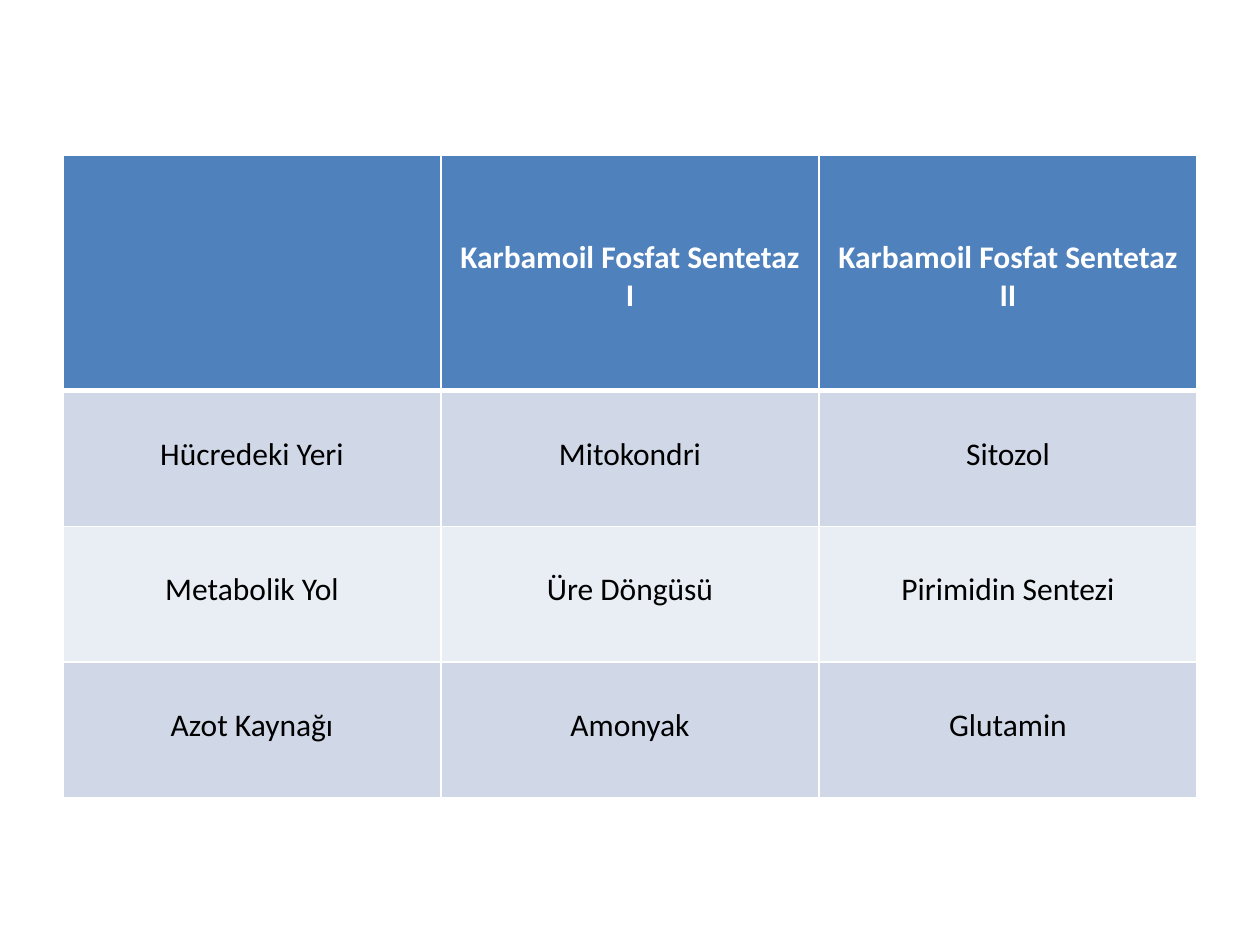
from lxml import etree
from pptx import Presentation
from pptx.dml.color import RGBColor
from pptx.enum.text import MSO_ANCHOR, PP_ALIGN
from pptx.oxml.ns import qn
from pptx.util import Cm, Pt

TOP, CENTER = MSO_ANCHOR.TOP, PP_ALIGN.CENTER

# Content
ROWS = [
    ("", "Karbamoil Fosfat Sentetaz I", "Karbamoil Fosfat Sentetaz II"),
    ("Hücredeki Yeri", "Mitokondri", "Sitozol"),
    ("Metabolik Yol", "Üre Döngüsü", "Pirimidin Sentezi"),
    ("Azot Kaynağı", "Amonyak", "Glutamin"),
]

# Format
WHITE, BLACK, BLUE = "FFFFFF", "000000", "4F81BD"
BANDS = ("D0D8E8", "E9EDF4")
LEFT, UPPER, COL_W = 1.27, 3.12, 7.62
HEAD_H, BODY_H = 4.75, 2.74
HEAD_PAD, BODY_PAD = 1.68, 0.9


def rgb(code):
    return RGBColor.from_string(code)


def put_text(cell, text, color=BLACK, bold=False, size=18, font="Calibri"):
    para = cell.text_frame.paragraphs[0]
    para.alignment = CENTER
    if not text:
        para.font.size = Pt(size)
        return
    run = para.add_run()
    run.text = text
    run.font.name, run.font.size, run.font.bold = font, Pt(size), bold
    run.font.color.rgb = rgb(color)


def add_edge(cell, side, width, color=WHITE):
    props = cell._tc.get_or_add_tcPr()
    line = etree.SubElement(props, qn("a:ln" + side), w=str(Pt(width)))
    fill = etree.SubElement(line, qn("a:solidFill"))
    etree.SubElement(fill, qn("a:srgbClr"), val=color)


def style_cell(cell, row):
    head = row == 0
    # Edges come before the fill in the cell properties
    widths = {"L": 1, "R": 1, "T": 3 if row == 1 else 1, "B": 3 if head else 1}
    for side, width in widths.items():
        add_edge(cell, side, width)
    cell.fill.solid()
    cell.fill.fore_color.rgb = rgb(BLUE if head else BANDS[(row - 1) % 2])
    cell.vertical_anchor = TOP
    cell.margin_top = Cm(HEAD_PAD if head else BODY_PAD)


def main():
    deck = Presentation()
    deck.slide_width, deck.slide_height = Cm(25.4), Cm(19.05)
    slide = deck.slides.add_slide(deck.slide_layouts[6])

    # Table grid
    heights = [HEAD_H] + [BODY_H] * (len(ROWS) - 1)
    cols = len(ROWS[0])
    table = slide.shapes.add_table(
        len(ROWS), cols, Cm(LEFT), Cm(UPPER), Cm(COL_W * cols), Cm(sum(heights))
    ).table
    for col in table.columns:
        col.width = Cm(COL_W)

    # Cells
    for r, texts in enumerate(ROWS):
        table.rows[r].height = Cm(heights[r])
        for c, text in enumerate(texts):
            cell = table.cell(r, c)
            style_cell(cell, r)
            put_text(cell, text, color=BLACK if r else WHITE, bold=r == 0)

    deck.save("out.pptx")


if __name__ == "__main__":
    main()
